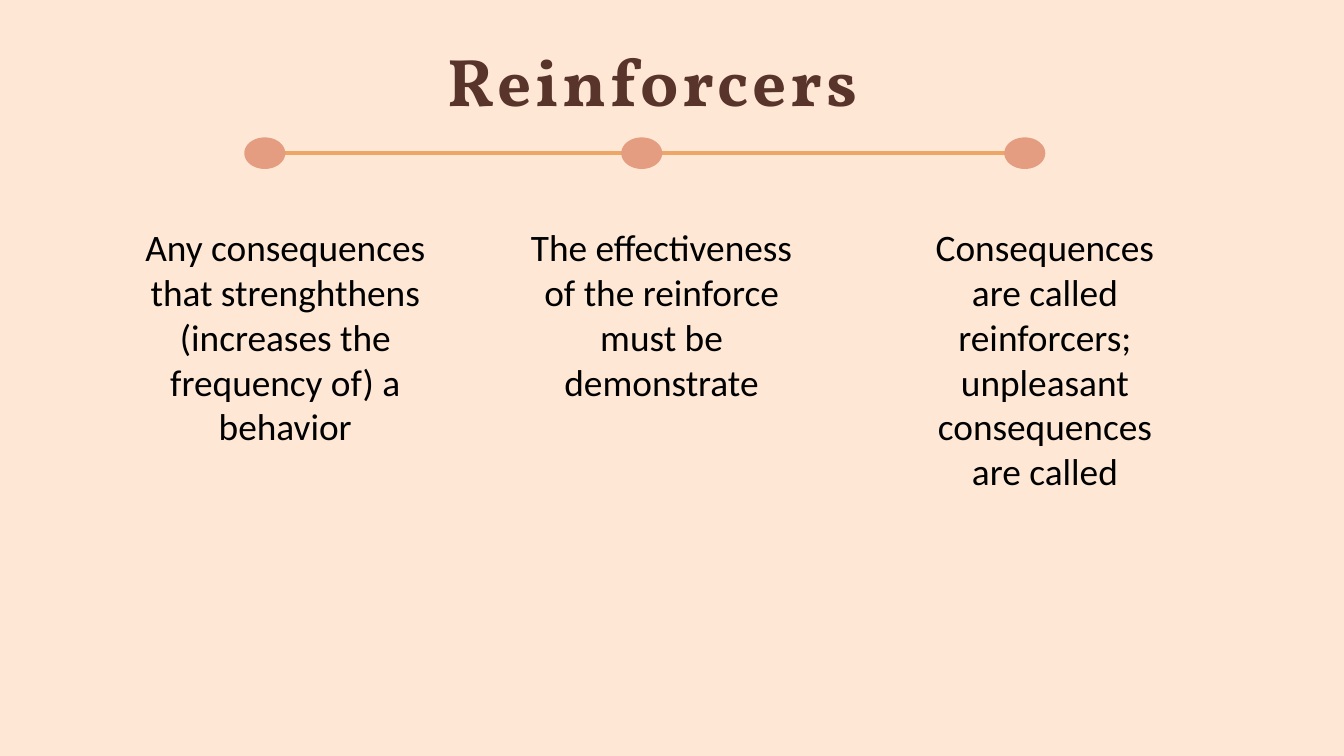
from dataclasses import dataclass
from math import cos, pi, sin

from lxml.etree import SubElement
from pptx import Presentation
from pptx.dml.color import RGBColor as Color
from pptx.enum.shapes import MSO_CONNECTOR as Connector, MSO_SHAPE as Shape
from pptx.enum.text import MSO_ANCHOR as Anchor, PP_ALIGN as Align
from pptx.oxml.ns import qn
from pptx.util import Inches, Pt

TITLE = {"text": "Reinforcers ", "left": 5.11, "top": 0.2,
         "width": 9.47, "height": 1.59}
COLUMNS = [
    {"text": "Any consequences that strenghthens (increases the frequency of) a behavior",
     "left": 1.8, "top": 2.54, "width": 4.89, "height": 4.17},
    {"text": "The effectiveness of the reinforce must be demonstrate",
     "left": 7.73, "top": 3.22, "width": 4.23, "height": 2.82},
    {"text": "Consequences are called reinforcers; unpleasant consequences are called",
     "left": 13.83, "top": 3.22, "width": 3.44, "height": 4.16},
]
DOTS = [3.94, 9.55, 15.25]


@dataclass(frozen=True)
class Theme:
    background: Color = Color.from_string("FEE8D5")
    line: Color = Color.from_string("ECA666")
    dot: Color = Color.from_string("E49D81")
    title: Color = Color.from_string("59342B")
    body: Color = Color.from_string("000000")
    title_font: str = "Vollkorn"
    body_font: str = "Calibri"
    title_size: int = 72
    body_size: int = 40
    line_width: float = 4.6


THEME = Theme()
GRID_COLUMNS, GRID_ROWS = 20, 11.25
TITLE_INSET = 0.38
TEXT_ROW = 3.34
LINE_ROW = 2.28
DOT_WIDTH, DOT_HEIGHT, DOT_STEPS = 0.61, 0.47, 48

deck = Presentation()
deck.slide_width, deck.slide_height = Inches(20), Inches(11.25)
page = deck.slides.add_slide(deck.slide_layouts[6])


def across(columns):
    return round(deck.slide_width * columns / GRID_COLUMNS)


def down(rows):
    return round(deck.slide_height * rows / GRID_ROWS)


def paint(shape, color):
    shape.shadow.inherit = False
    shape.fill.solid()
    shape.fill.fore_color.rgb = color
    shape.line.fill.background()


def add_text(text, *, left, top, width, height, inset, font, size, color,
             bold=False, spacing=0):
    box = page.shapes.add_textbox(across(left), down(top),
                                  across(width), down(height))
    frame = box.text_frame
    frame.word_wrap = True
    frame.vertical_anchor = Anchor.TOP
    frame.margin_left = frame.margin_right = frame.margin_bottom = 0
    frame.margin_top = down(inset)
    para = frame.paragraphs[0]
    para.alignment = Align.CENTER
    span = para.add_run()
    span.text = text
    span.font.name, span.font.size = font, Pt(size)
    span.font.bold, span.font.color.rgb = bold, color
    if spacing:
        span.font._element.set("spc", str(spacing * 100))


def dot_outline(center):
    angles = [2 * pi * step / DOT_STEPS for step in range(DOT_STEPS)]
    return [(across(center + DOT_WIDTH / 2 * cos(angle)),
             down(LINE_ROW + DOT_HEIGHT / 2 * sin(angle))) for angle in angles]


def add_timeline():
    line = page.shapes.add_connector(
        Connector.STRAIGHT, across(DOTS[0]), down(LINE_ROW),
        across(DOTS[-1]), down(LINE_ROW))
    line.line.color.rgb = THEME.line
    line.line.width = Pt(THEME.line_width)
    SubElement(line._element.spPr, qn("a:effectLst"))

    first, *others = [dot_outline(center) for center in DOTS]
    builder = page.shapes.build_freeform(*first[0])
    builder.add_line_segments(first[1:], close=True)
    for outline in others:
        builder.move_to(*outline[0])
        builder.add_line_segments(outline[1:], close=True)
    paint(builder.convert_to_shape(), THEME.dot)


backdrop = page.shapes.add_shape(Shape.RECTANGLE, 0, 0,
                                 deck.slide_width, deck.slide_height)
paint(backdrop, THEME.background)
add_timeline()
for column in COLUMNS:
    add_text(**column, inset=TEXT_ROW - column["top"], font=THEME.body_font,
             size=THEME.body_size, color=THEME.body)
add_text(**TITLE, inset=TITLE_INSET, font=THEME.title_font,
         size=THEME.title_size, color=THEME.title, bold=True, spacing=4)
deck.save("out.pptx")
